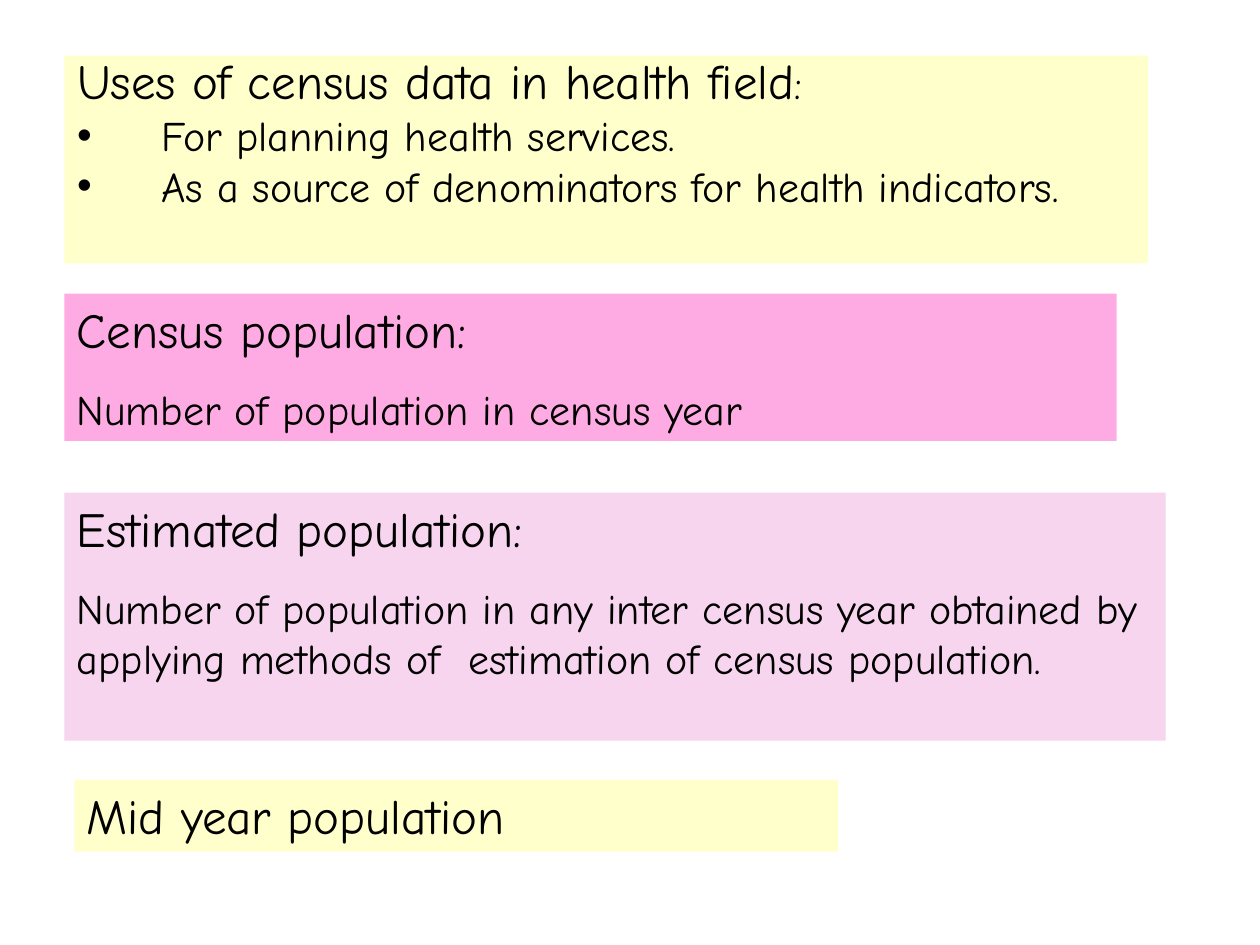
from dataclasses import dataclass

from lxml.etree import SubElement
from pptx import Presentation
from pptx.dml.color import RGBColor
from pptx.enum.shapes import MSO_SHAPE
from pptx.enum.text import MSO_ANCHOR, MSO_AUTO_SIZE, PP_ALIGN
from pptx.oxml.ns import qn
from pptx.util import Cm, Pt


@dataclass(frozen=True)
class Theme:
    """Colours, font and type sizes of the slide."""
    font: str = "Comic Neue"
    ink: RGBColor = RGBColor(0x00, 0x00, 0x00)
    cream: RGBColor = RGBColor(0xFF, 0xFF, 0xCC)
    pink: RGBColor = RGBColor(0xFF, 0xAB, 0xE3)
    lilac: RGBColor = RGBColor(0xF7, 0xD5, 0xEE)
    heading: Pt = Pt(28)
    body: Pt = Pt(24)
    list_gap: Pt = Pt(6)
    panel_gap: Pt = Pt(14)


THEME = Theme()


def style_span(span, size):
    """Give a run the slide's font, colour and the given size."""
    span.font.name = THEME.font
    span.font.size = size
    span.font.color.rgb = THEME.ink


def prepare_box(box, fill):
    """Fill a box and lay out its text from the top left."""
    box.fill.solid()
    box.fill.fore_color.rgb = fill
    box.line.fill.background()
    frame = box.text_frame
    frame.word_wrap = True
    frame.auto_size = MSO_AUTO_SIZE.NONE
    frame.vertical_anchor = MSO_ANCHOR.TOP
    return frame


def set_hanging_bullet(para, symbol):
    """Set a hanging indent, with a bullet if a symbol is given."""
    properties = para._p.get_or_add_pPr()
    properties.set("marL", str(Cm(1.7)))
    properties.set("indent", str(-Cm(1.7)))
    if symbol:
        SubElement(properties, qn("a:buFont"), typeface="Arial")
        SubElement(properties, qn("a:buChar"), char=symbol)
    else:
        SubElement(properties, qn("a:buNone"))


def fill_list(box, bounds, heading, items):
    """Place the body placeholder with a heading and its bulleted items."""
    box.left, box.top, box.width, box.height = map(Cm, bounds)
    frame = prepare_box(box, THEME.cream)
    frame.text = "\n".join([heading, *items])
    for index, para in enumerate(frame.paragraphs):
        set_hanging_bullet(para, "•" if index else None)
        para.alignment = PP_ALIGN.LEFT
        para.line_spacing = 0.8
        para.space_before = THEME.list_gap if index else Pt(0)
        style_span(para.runs[0], THEME.body if index else THEME.heading)
    colon = frame.paragraphs[0].add_run()
    colon.text = ":"
    style_span(colon, THEME.body)


def add_panel(page, bounds, fill, lines):
    """Add a coloured panel with a heading and any text under it."""
    box = page.shapes.add_shape(MSO_SHAPE.RECTANGLE, *map(Cm, bounds))
    box.shadow.inherit = False
    frame = prepare_box(box, fill)
    frame.text = "\n".join(lines)
    for index, para in enumerate(frame.paragraphs):
        para.alignment = PP_ALIGN.LEFT
        para.space_before = THEME.panel_gap if index else Pt(0)
        style_span(para.runs[0], THEME.body if index else THEME.heading)


def main():
    """Build the census slide and save it."""
    deck = Presentation()
    deck.slide_width, deck.slide_height = Cm(25.4), Cm(19.05)
    page = deck.slides.add_slide(deck.slide_layouts[1])
    title = page.shapes.title.element
    title.getparent().remove(title)
    fill_list(page.placeholders[1], (1.3, 1.12, 21.84, 4.19),
              "Uses of census data in health field",
              ["For planning health services.",
               "As a source of denominators for health indicators."])
    panels = [
        ((1.3, 5.92, 21.21, 2.97), THEME.pink,
         ["Census population:", "Number of population in census year"]),
        ((1.3, 9.93, 22.2, 5), THEME.lilac,
         ["Estimated population:",
          "Number of population in any inter census year obtained by "
          "applying methods of  estimation of census population."]),
        ((1.5, 15.72, 15.39, 1.45), THEME.cream, ["Mid year population"]),
    ]
    for bounds, fill, lines in panels:
        add_panel(page, bounds, fill, lines)
    deck.save("out.pptx")


if __name__ == "__main__":
    main()
